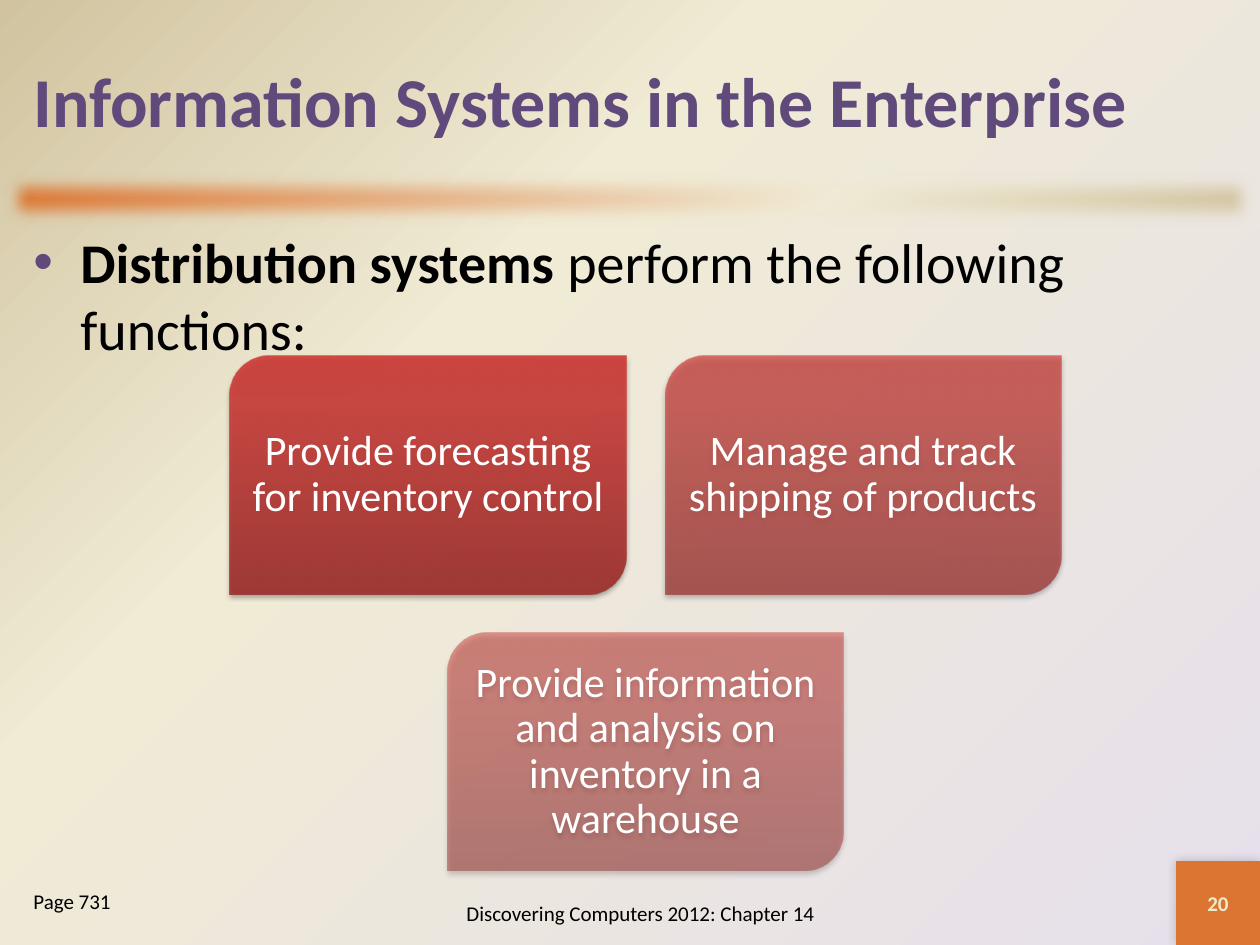
from lxml.etree import SubElement
from pptx import Presentation
from pptx.dml.color import RGBColor
from pptx.enum.shapes import MSO_SHAPE
from pptx.enum.text import MSO_ANCHOR, PP_ALIGN
from pptx.oxml.ns import qn
from pptx.util import Emu, Pt

WIDTH, HEIGHT = 1260, 945
EMU_PER_PX = 914400 / 126
PURPLE, ORANGE, CREAM, TAN = "604A7B", "DB7531", "F0EBD5", "D1C39F"
CARD_TEXTS = [
    "Provide forecasting for inventory control",
    "Manage and track shipping of products",
    "Provide information and analysis on inventory in a warehouse",
]


def px(length):
    """Turn pixels into EMU."""
    return Emu(round(length * EMU_PER_PX))


def color(value):
    """Turn a hex string into a colour."""
    return RGBColor.from_string(value)


def add_node(parent, tag, **attributes):
    """Append a DrawingML element with the given attributes."""
    values = {name: str(value) for name, value in attributes.items()}
    return SubElement(parent, qn(f"a:{tag}"), values)


def set_gradient(owner, stops, angle=None, alpha=100):
    """Replace the solid fill of owner by a linear or corner-centred gradient."""
    solid = owner.find(qn("a:solidFill"))
    gradient = add_node(owner, "gradFill", rotWithShape=1)
    owner.replace(solid, gradient)
    stop_list = add_node(gradient, "gsLst")
    for position, value in stops:
        stop = add_node(stop_list, "gs", pos=position * 1000)
        tint = add_node(stop, "srgbClr", val=value)
        if alpha < 100:
            add_node(tint, "alpha", val=alpha * 1000)
    if angle is None:
        circle = add_node(gradient, "path", path="circle")
        add_node(circle, "fillToRect", l=100000, t=100000)
    else:
        add_node(gradient, "lin", ang=angle * 60000, scaled=0)


def add_shadow(shape, blur, distance, direction, alpha):
    """Give a shape a soft black outer shadow."""
    effects = shape._element.spPr.find(qn("a:effectLst"))
    shadow = add_node(effects, "outerShdw", blurRad=Pt(blur), dist=Pt(distance),
                      dir=direction * 60000, algn="ctr", rotWithShape=0)
    tint = add_node(shadow, "srgbClr", val="000000")
    add_node(tint, "alpha", val=alpha * 1000)


def add_panel(page, kind, box, fill):
    """Add a filled shape without outline or shadow."""
    shape = page.shapes.add_shape(kind, *map(px, box))
    shape.fill.solid()
    shape.fill.fore_color.rgb = color(fill)
    shape.line.fill.background()
    shape.shadow.inherit = False
    return shape


def write(shape, text, size, value, bold=False, align=PP_ALIGN.LEFT, anchor=MSO_ANCHOR.MIDDLE):
    """Write one formatted paragraph into a shape and return it."""
    frame = shape.text_frame
    frame.text = text
    frame.word_wrap = True
    frame.vertical_anchor = anchor
    para = frame.paragraphs[0]
    para.alignment = align
    for span in para.runs:
        format_span(span, size, value, bold)
    return para


def format_span(span, size, value, bold):
    """Set the font of a run."""
    span.font.name = "Calibri"
    span.font.size = Pt(size)
    span.font.bold = bold
    span.font.color.rgb = color(value)


def add_background(page):
    """Fill the page with a gradient centred on its lower right corner."""
    page.background.fill.solid()
    owner = page.element.find(".//" + qn("p:bgPr"))
    set_gradient(owner, [(0, "E6E0EC"), (65, CREAM), (100, TAN)])


def add_header(page, left, top, width):
    """Add the title and the soft rule below it."""
    rule = add_panel(page, MSO_SHAPE.RECTANGLE, (left, top + 168, width, 63), ORANGE)
    properties = rule._element.spPr
    set_gradient(properties, [(0, ORANGE), (65, CREAM), (100, TAN)], angle=45)
    add_node(properties.find(qn("a:effectLst")), "softEdge", rad=Pt(10))
    title = page.shapes.add_textbox(*map(px, (left + 21, top + 21, width - 42, 158)))
    write(title, "Information Systems in the Enterprise", 40, PURPLE, bold=True)


def add_lead(page, box):
    """Add the bulleted lead sentence with its bold term."""
    lead = page.shapes.add_textbox(*map(px, box))
    para = write(lead, "Distribution systems ", 32, "000000", True, anchor=MSO_ANCHOR.TOP)
    properties = para._p.get_or_add_pPr()
    properties.set("marL", str(px(47)))
    properties.set("indent", str(px(-47)))
    add_node(add_node(properties, "buClr"), "srgbClr", val=PURPLE)
    add_node(properties, "buFont", typeface="Arial")
    add_node(properties, "buChar", char="•")
    span = para.add_run()
    span.text = "perform the following functions:"
    format_span(span, 32, "000000", False)


def add_cards(page, left, top):
    """Add two cards in a row and a third centred below, each paler than the last."""
    width, height, gap = 396, 238, 39
    stops = [(0, "9C2F2D"), (80, "CB3E3A"), (100, "CE3B37")]
    for index, text in enumerate(CARD_TEXTS):
        row, column = divmod(index, 2)
        x = left + (width + gap) * (column + row / 2)
        y = top + (height + gap) * row
        card = add_panel(page, MSO_SHAPE.ROUND_2_DIAG_RECTANGLE, (x, y, width, height), "CB3E3A")
        set_gradient(card._element.spPr, stops, angle=270, alpha=90 - 20 * index)
        add_shadow(card, 3.1, 1.8, 90, 35)
        frame = card.text_frame
        frame.margin_left = frame.margin_right = frame.margin_top = frame.margin_bottom = px(1)
        para = write(card, text, 24, "FFFFFF", align=PP_ALIGN.CENTER)
        para.line_spacing = 0.9


def add_footer(page, top):
    """Add the page reference, the book title and the numbered square."""
    reference = page.shapes.add_textbox(*map(px, (21, top, 231, 63)))
    write(reference, "Page 731", 12, "000000", anchor=MSO_ANCHOR.TOP)
    book = page.shapes.add_textbox(*map(px, (378, top, 525, 63)))
    write(book, "Discovering Computers 2012: Chapter 14", 12, "000000", align=PP_ALIGN.CENTER)
    side = 84
    square = add_panel(page, MSO_SHAPE.RECTANGLE, (WIDTH - side, HEIGHT - side, side, side), ORANGE)
    add_shadow(square, 6, 0, 225, 20)
    write(square, "20", 12, "EEEBCA", bold=True, align=PP_ALIGN.CENTER)


def main():
    """Build the deck and save it."""
    deck = Presentation()
    deck.slide_width, deck.slide_height = px(WIDTH), px(HEIGHT)
    page = deck.slides.add_slide(deck.slide_layouts[6])
    add_background(page)
    add_header(page, 0, 0, WIDTH)
    add_lead(page, (21, 221, 1218, 640))
    add_footer(page, 882)
    add_cards(page, 230, 356)
    deck.save("out.pptx")


if __name__ == "__main__":
    main()
